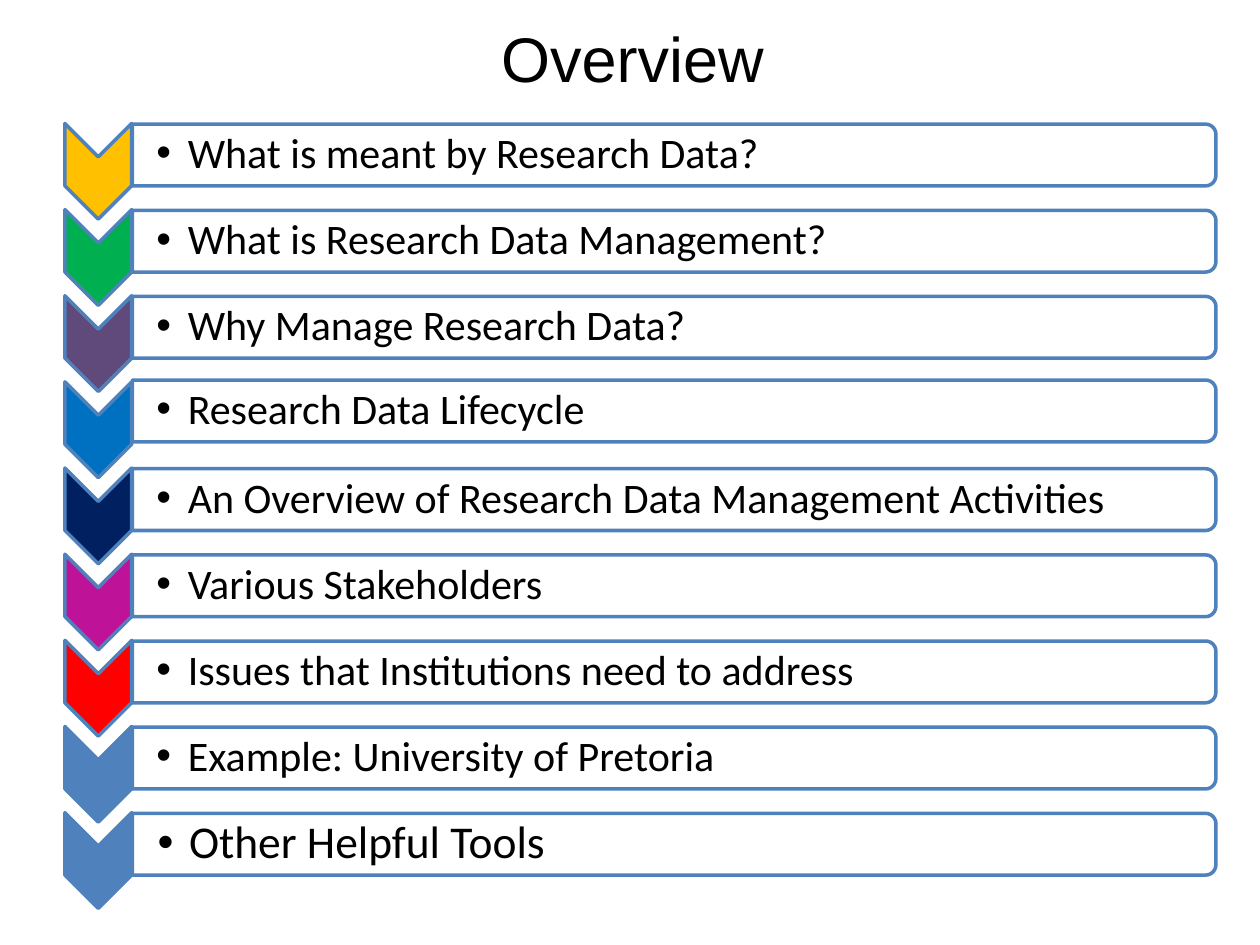
from dataclasses import dataclass
from lxml.etree import SubElement
from pptx import Presentation
from pptx.dml.color import RGBColor
from pptx.enum.shapes import MSO_SHAPE
from pptx.enum.text import MSO_ANCHOR, PP_ALIGN
from pptx.oxml.ns import qn
from pptx.slide import Slide
from pptx.util import Inches, Pt

BLACK = RGBColor(0x00, 0x00, 0x00)
WHITE = RGBColor(0xFF, 0xFF, 0xFF)
BLUE = RGBColor(0x4F, 0x81, 0xBD)
AMBER = RGBColor(0xFF, 0xC0, 0x00)
GREEN = RGBColor(0x00, 0xB0, 0x50)
PURPLE = RGBColor(0x60, 0x4A, 0x7B)
AZURE = RGBColor(0x00, 0x70, 0xC0)
NAVY = RGBColor(0x00, 0x20, 0x60)
MAGENTA = RGBColor(0xBE, 0x12, 0x99)
RED = RGBColor(0xFF, 0x00, 0x00)

TOPICS = [
    ("What is meant by Research Data?", AMBER, 24, 0),
    ("What is Research Data Management?", GREEN, 24, 0),
    ("Why Manage Research Data?", PURPLE, 24, 0),
    ("Research Data Lifecycle", AZURE, 24, -0.02),
    ("An Overview of Research Data Management Activities", NAVY, 24, 0),
    ("Various Stakeholders", MAGENTA, 24, 0),
    ("Issues that Institutions need to address", RED, 24, 0),
    ("Example: University of Pretoria", BLUE, 24, 0),
    ("Other Helpful Tools", BLUE, 26, 0),
]
FIRST_CENTRE = 1.23
LAST_CENTRE = 6.7
PITCH = (LAST_CENTRE - FIRST_CENTRE) / (len(TOPICS) - 1)


@dataclass
class OverviewSlide:
    """Holds the slide and its style, and draws each kind of element."""

    slide: Slide
    title_font: str = "Arial"
    topic_font: str = "Calibri"
    outline: RGBColor = BLUE

    def add_text(self, paragraph, text, font, size):
        run = paragraph.add_run()
        run.text = text
        run.font.name = font
        run.font.size = Pt(size)
        run.font.color.rgb = BLACK

    def title(self, text):
        heading = self.slide.shapes.title
        heading.left, heading.top = Inches(0.52), Inches(0.15)
        heading.width, heading.height = Inches(9), Inches(0.61)
        heading.text_frame.vertical_anchor = MSO_ANCHOR.MIDDLE
        paragraph = heading.text_frame.paragraphs[0]
        paragraph.alignment = PP_ALIGN.CENTER
        self.add_text(paragraph, text, self.title_font, 36)

    def turned_shape(self, preset, centre_x, centre_y, width, height, fill):
        shape = self.slide.shapes.add_shape(
            preset, Inches(centre_x - width / 2), Inches(centre_y - height / 2),
            Inches(width), Inches(height))
        shape.rotation = 90
        shape.shadow.inherit = False
        shape.fill.solid()
        shape.fill.fore_color.rgb = fill
        shape.line.color.rgb = self.outline
        shape.line.width = Pt(2)
        return shape

    def chevron(self, centre_y, fill):
        self.turned_shape(MSO_SHAPE.CHEVRON, 0.78, centre_y, 0.76, 0.53, fill)

    def bar(self, centre_y):
        bar = self.turned_shape(
            MSO_SHAPE.ROUND_2_SAME_RECTANGLE, 5.35, centre_y, 0.49, 8.6, WHITE)
        colour = bar.element.spPr.find(qn("a:solidFill"))[0]
        SubElement(colour, qn("a:alpha"), val="90000")

    def topic(self, centre_y, text, size):
        box = self.slide.shapes.add_textbox(
            Inches(1.05), Inches(centre_y - 0.22), Inches(8.58), Inches(0.44))
        frame = box.text_frame
        frame.word_wrap = True
        frame.vertical_anchor = MSO_ANCHOR.MIDDLE
        frame.margin_left = Inches(0.19 if size == 24 else 0.2)
        frame.margin_top = frame.margin_right = frame.margin_bottom = Inches(0.02)
        paragraph = frame.paragraphs[0]
        properties = paragraph._p.get_or_add_pPr()
        properties.set("marL", str(Inches(0.25)))
        properties.set("indent", str(-Inches(0.25)))
        SubElement(properties, qn("a:buFont"), typeface="Arial")
        SubElement(properties, qn("a:buChar"), char="•")
        paragraph.level = 1
        paragraph.line_spacing = 0.9
        self.add_text(paragraph, text, self.topic_font, size)


def main():
    presentation = Presentation()
    presentation.slide_width, presentation.slide_height = Inches(10), Inches(7.5)
    overview = OverviewSlide(
        presentation.slides.add_slide(presentation.slide_layouts[5]))
    overview.title("Overview")
    for row, (text, colour, size, shift) in enumerate(TOPICS):
        centre_y = FIRST_CENTRE + row * PITCH
        overview.chevron(centre_y + 0.13, colour)
        overview.bar(centre_y + shift)
        overview.topic(centre_y + shift, text, size)
    presentation.save("out.pptx")


if __name__ == "__main__":
    main()
